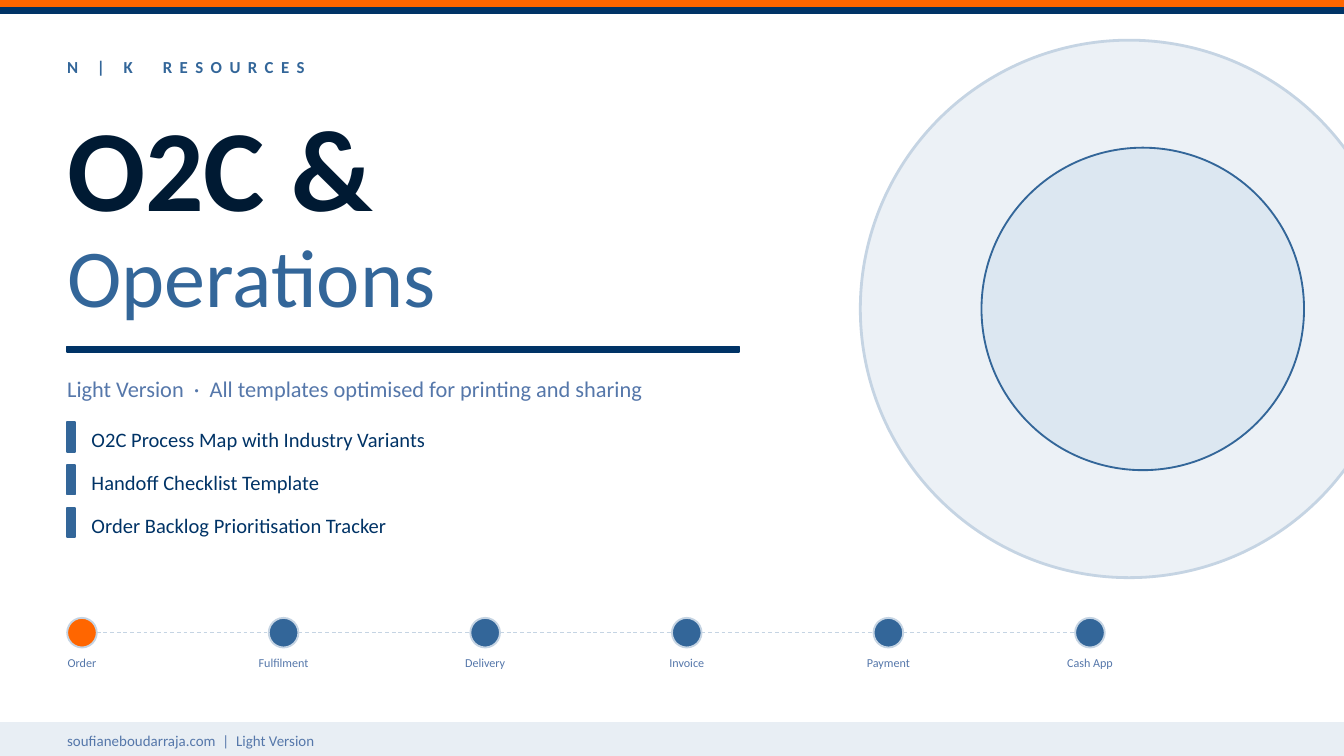
from lxml.etree import SubElement
from pptx import Presentation
from pptx.dml.color import RGBColor
from pptx.enum.dml import MSO_LINE
from pptx.enum.shapes import MSO_CONNECTOR, MSO_SHAPE
from pptx.enum.text import MSO_ANCHOR, PP_ALIGN
from pptx.oxml.ns import qn
from pptx.util import Cm, Pt

FONT = "Calibri"
ORANGE, NAVY, INK = "FF6600", "003366", "001A33"
BLUE, SLATE, MIST, PALE = "336699", "5577AA", "C5D4E3", "E8EEF4"


def rgb(value):
    return RGBColor.from_string(value)


def add_shape(s, kind, x, y, w, h, fill, line=None, weight=1, alpha=None):
    sp = s.shapes.add_shape(kind, Cm(x), Cm(y), Cm(w), Cm(h))
    sp.shadow.inherit = False
    sp.fill.solid()
    sp.fill.fore_color.rgb = rgb(fill)
    sp.line.color.rgb = rgb(line or fill)
    sp.line.width = Pt(weight)
    if alpha is not None:
        color = sp._element.spPr.find(qn("a:solidFill"))[0]
        SubElement(color, qn("a:alpha"), val=str(alpha * 1000))


def add_text(s, x, y, w, h, text, size, color, bold=False, align=PP_ALIGN.LEFT, spacing=0):
    tf = s.shapes.add_textbox(Cm(x), Cm(y), Cm(w), Cm(h)).text_frame
    tf.word_wrap = True
    tf.vertical_anchor = MSO_ANCHOR.MIDDLE
    tf.margin_left = tf.margin_right = tf.margin_top = tf.margin_bottom = 0
    p = tf.paragraphs[0]
    p.alignment = align
    r = p.add_run()
    r.text = text
    r.font.name = FONT
    r.font.size = Pt(size)
    r.font.bold = bold
    r.font.color.rgb = rgb(color)
    if spacing:
        r.font._element.set("spc", str(spacing * 100))


def add_dashed_line(s, x1, x2, y):
    line = s.shapes.add_connector(MSO_CONNECTOR.STRAIGHT, Cm(x1), Cm(y), Cm(x2), Cm(y))
    line.line.color.rgb = rgb(MIST)
    line.line.width = Pt(0.5)
    line.line.dash_style = MSO_LINE.DASH
    SubElement(line._element.spPr, qn("a:effectLst"))


def add_top_bands(s, x, y, w):
    add_shape(s, MSO_SHAPE.RECTANGLE, x, y, w, 0.15, ORANGE)
    add_shape(s, MSO_SHAPE.RECTANGLE, x, y + 0.15, w, 0.1, NAVY)


def add_rings(s, x, y, size):
    add_shape(s, MSO_SHAPE.OVAL, x, y, size, size, PALE, MIST, 1.5, 80)
    inner = size * 0.6
    add_shape(s, MSO_SHAPE.OVAL, x + 2.29, y + (size - inner) / 2, inner, inner,
              "D6E4F0", BLUE, 1, 70)


def add_process(s, x, y, pitch, steps):
    dot, label_w = 0.56, 1.83
    for i, step in enumerate(steps):
        left = x + i * pitch
        add_shape(s, MSO_SHAPE.OVAL, left, y, dot, dot, BLUE if i else ORANGE, MIST)
        if i < len(steps) - 1:
            add_dashed_line(s, left + dot, left + pitch, y + dot / 2)
        add_text(s, left + (dot - label_w) / 2, y + 0.61, label_w, 0.46,
                 step, 6.5, SLATE, align=PP_ALIGN.CENTER)


def add_heading(s, x, y, w):
    add_text(s, x, y, 12.7, 0.76, "N | K  RESOURCES", 9, BLUE, bold=True, spacing=4)
    add_text(s, x, y + 1.09, w, 2.29, "O2C &", 62, INK, bold=True)
    add_text(s, x, y + 3.28, w, 2.03, "Operations", 44, BLUE)
    add_shape(s, MSO_SHAPE.RECTANGLE, x, y + 5.66, 12.7, 0.1, NAVY)
    add_text(s, x, y + 6.07, 17.78, 0.76,
             "Light Version  ·  All templates optimised for printing and sharing", 12, SLATE)


def add_contents(s, x, y, w, pitch, items):
    for i, item in enumerate(items):
        top = y + i * pitch
        add_shape(s, MSO_SHAPE.RECTANGLE, x, top + 0.03, 0.15, 0.56, BLUE)
        add_text(s, x + 0.46, top, w - 0.46, 0.71, item, 11, NAVY)


def add_footer(s, x, y, w, h):
    add_shape(s, MSO_SHAPE.RECTANGLE, x, y, w, h, PALE)
    add_text(s, x + 1.27, y + 0.1, 15.24, 0.46,
             "soufianeboudarraja.com  |  Light Version", 8, SLATE)


def main():
    prs = Presentation()
    prs.slide_width, prs.slide_height = Cm(25.4), Cm(14.29)
    s = prs.slides.add_slide(prs.slide_layouts[6])
    s.background.fill.solid()
    s.background.fill.fore_color.rgb = rgb("FFFFFF")
    add_top_bands(s, 0, 0, 25.4)
    add_rings(s, 16.26, 0.76, 10.16)
    add_process(s, 1.27, 11.68, 3.81,
                ["Order", "Fulfilment", "Delivery", "Invoice", "Payment", "Cash App"])
    add_heading(s, 1.27, 0.89, 22.86)
    add_contents(s, 1.27, 7.95, 15.7, 0.81,
                 ["O2C Process Map with Industry Variants",
                  "Handoff Checklist Template",
                  "Order Backlog Prioritisation Tracker"])
    add_footer(s, 0, 13.67, 25.4, 0.62)
    prs.save("out.pptx")


if __name__ == "__main__":
    main()
